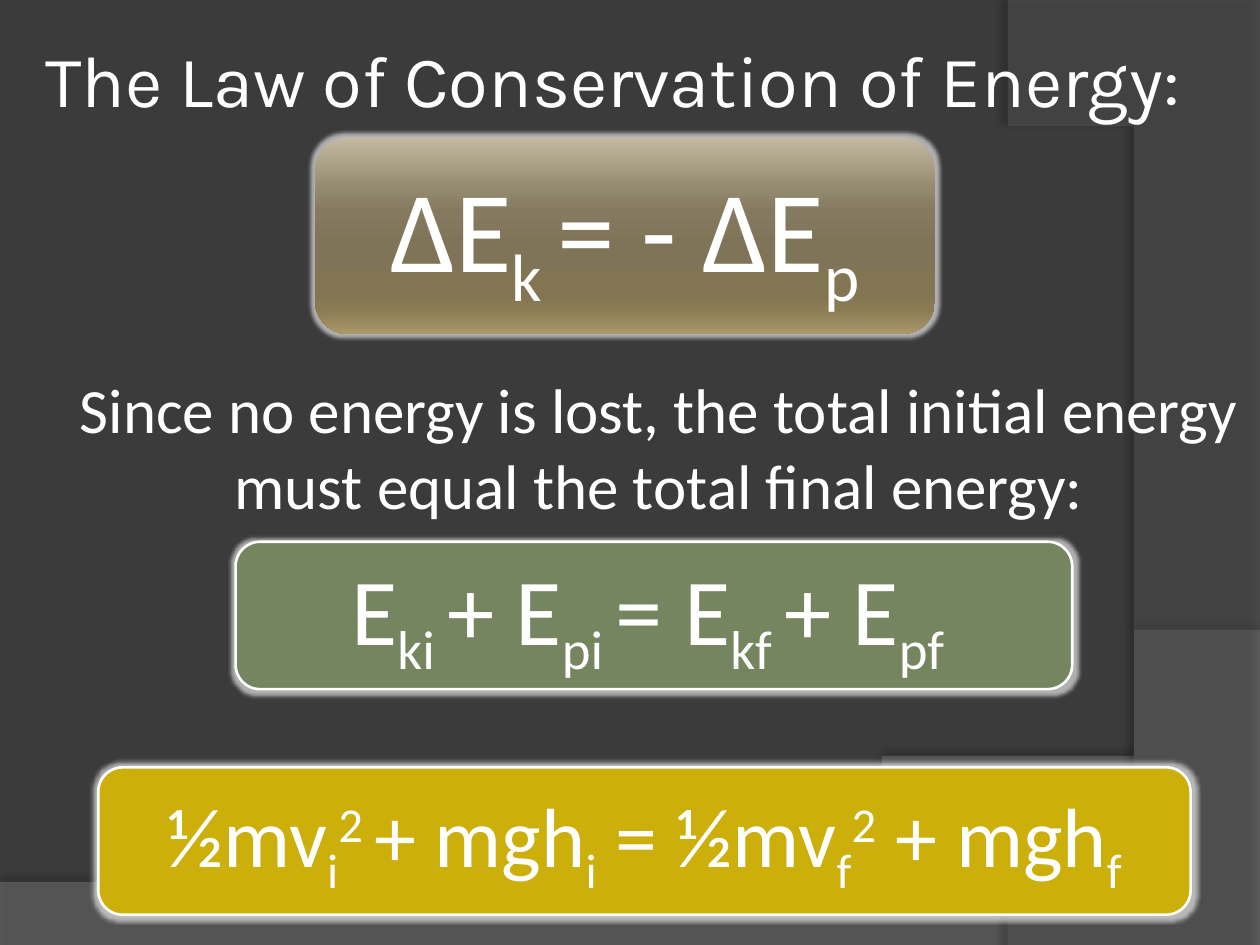
"""Build a slide on the law of conservation of energy."""
from dataclasses import dataclass

from pptx import Presentation
from pptx.dml.color import RGBColor
from pptx.enum.shapes import MSO_SHAPE
from pptx.enum.text import MSO_ANCHOR, MSO_AUTO_SIZE, PP_ALIGN
from pptx.oxml import parse_xml
from pptx.oxml.ns import nsdecls, qn
from pptx.util import Inches, Pt

WHITE = "FFFFFF"
BASES = {"_": "-25000", "^": "30000"}
Point = tuple[float, float]


@dataclass
class Box:
    """A rounded box with a formula; runs led by _ or ^ are lowered or raised."""
    left: float
    top: float
    width: float
    height: float
    size: int
    runs: list[str]
    fill: str = ""


@dataclass
class Wave:
    """A translucent backdrop shape with a soft shadow."""
    points: list[Point]
    color: str
    alpha: int
    shade: int
    dist: float
    angle: int


BOXES = [
    Box(2.5, 1.09, 4.92, 1.56, 66, ["ΔE", "_k ", "= - ΔE", "_p"]),
    Box(1.87, 4.3, 6.64, 1.17, 54,
        ["E", "_ki ", "+ E", "_pi ", "= E", "_kf ", "+ E", "_pf "], "748560"),
    Box(0.78, 6.09, 8.67, 1.17, 48,
        ["½mv", "_i", "^2 ", "+ mgh", "_i", " = ½mv", "_f", "^2", " + mgh", "_f"],
        "CCAF0A"),
]
STOPS = {0: "C4BAA3", 25: "958B71", 38: "857A60", 55: "7F7457",
         80: "827552", 88: "8C7C54", 100: "AA9868"}


def rgb(code: str) -> RGBColor:
    """Turn a hex string into a colour."""
    return RGBColor.from_string(code)


def curve(a: Point, b: Point, c: Point, d: Point, steps: int = 40) -> list[Point]:
    """Sample a cubic Bezier curve."""
    ts = [i / steps for i in range(steps + 1)]
    return [tuple((1 - t) ** 3 * p + 3 * t * (1 - t) ** 2 * q
                  + 3 * t * t * (1 - t) * r + t ** 3 * s
                  for p, q, r, s in zip(a, b, c, d)) for t in ts]


def add_fx(shape, tag: str, attrs: str, color: str, alpha: int) -> None:
    """Give a shape one effect in place of the theme's."""
    shape.shadow.inherit = False
    shape._element.spPr.find(qn("a:effectLst")).append(parse_xml(
        f'<a:{tag} {nsdecls("a")} {attrs}><a:srgbClr val="{color}">'
        f'<a:alpha val="{alpha * 1000}"/></a:srgbClr></a:{tag}>'))


def style(para, size: float, face: str, align: PP_ALIGN) -> None:
    """Set the font and alignment of a paragraph."""
    para.alignment = align
    para.font.size, para.font.name = Pt(size), face
    para.font.color.rgb = rgb(WHITE)


def place(shape, left: float, top: float, width: float, height: float) -> None:
    """Move and size a shape."""
    shape.left, shape.top = Inches(left), Inches(top)
    shape.width, shape.height = Inches(width), Inches(height)


def draw_wave(slide, wave: Wave, layer: int) -> None:
    """Draw a backdrop shape behind the text."""
    start, *rest = wave.points
    pen = slide.shapes.build_freeform(*start, scale=Inches(1))
    pen.add_line_segments(rest, close=True)
    shape = pen.convert_to_shape()
    shape.fill.solid()
    shape.fill.fore_color.rgb = rgb(wave.color)
    tint = shape._element.spPr.find(".//" + qn("a:srgbClr"))
    tint.append(parse_xml(f'<a:alpha {nsdecls("a")} val="{wave.alpha * 1000}"/>'))
    shape.line.fill.background()
    add_fx(shape, "outerShdw", f'blurRad="{Pt(4)}" dist="{Pt(wave.dist)}" '
           f'dir="{wave.angle * 60000}" rotWithShape="0"', "000000", wave.shade)
    slide.shapes._spTree.insert(2 + layer, shape._element)


def draw_box(slide, box: Box) -> None:
    """Draw a glowing box with its formula."""
    area = map(Inches, (box.left, box.top, box.width, box.height))
    shape = slide.shapes.add_shape(MSO_SHAPE.ROUNDED_RECTANGLE, *area)
    if box.fill:
        shape.fill.solid()
        shape.fill.fore_color.rgb = rgb(box.fill)
        shape.line.color.rgb = rgb(WHITE)
        shape.line.width = Pt(1.5)
    else:
        stops = "".join(f'<a:gs pos="{pos * 1000}"><a:srgbClr val="{code}"/></a:gs>'
                        for pos, code in STOPS.items())
        shape._element.spPr.find(qn("a:prstGeom")).addnext(parse_xml(
            f'<a:gradFill {nsdecls("a")} rotWithShape="1"><a:gsLst>{stops}</a:gsLst>'
            '<a:lin ang="5400000" scaled="0"/></a:gradFill>'))
        shape.line.fill.background()
    add_fx(shape, "glow", f'rad="{Pt(5)}"', WHITE, 60)
    frame = shape.text_frame
    frame.vertical_anchor = MSO_ANCHOR.MIDDLE
    para = frame.paragraphs[0]
    style(para, box.size, "Calibri", PP_ALIGN.CENTER)
    for text in box.runs:
        run = para.add_run()
        run.text = text.lstrip("_^")
        if text[0] in BASES:
            run.font._element.set("baseline", BASES[text[0]])


def fill_text(slide) -> None:
    """Write the title and the body sentence."""
    title, body = slide.placeholders
    place(title, 0.31, 0, 9.38, 1.25)
    place(body, 0, 2.89, 10, 1.72)
    for shape in (title, body):
        shape.text_frame.auto_size = MSO_AUTO_SIZE.NONE
    frame = title.text_frame
    frame.text = "The Law of Conservation of Energy:"
    frame.vertical_anchor = MSO_ANCHOR.MIDDLE
    frame.margin_left = frame.margin_right = Inches(0.05)
    style(frame.paragraphs[0], 41.4, "Karla", PP_ALIGN.LEFT)
    body.text_frame.text = ("Since no energy is lost, the total initial energy "
                            "must equal the total final energy:")
    para = body.text_frame.paragraphs[0]
    style(para, 36, "Calibri", PP_ALIGN.CENTER)
    para.space_before = Pt(7.2)
    props = para._p.get_or_add_pPr()
    props.set("marL", str(Inches(0.46)))
    props.set("indent", "0")
    props.find(qn("a:spcBef")).addnext(parse_xml(f'<a:buNone {nsdecls("a")}/>'))


def main() -> None:
    """Build and save the slide."""
    deck = Presentation()
    deck.slide_width, deck.slide_height = Inches(10), Inches(7.5)
    slide = deck.slides.add_slide(deck.slide_layouts[1])
    slide.background.fill.solid()
    slide.background.fill.fore_color.rgb = rgb("3B3B3B")
    swell = curve((10, 5.2), (5.59, 7.29), (3.91, 7.19), (0, 7.05))
    arc = curve((8.21, 7.5), (9.35, 6.19), (10.18, 3), (8, 0))
    waves = [Wave([(0, 7.5), (10, 7.5), *swell], "7F7F7F", 45, 35, 3.5, 270),
             Wave([(10, 0.02), (10, 7.5), *arc], "5E5E5E", 40, 45, 4, 180)]
    for layer, wave in enumerate(waves):
        draw_wave(slide, wave, layer)
    fill_text(slide)
    for box in BOXES:
        draw_box(slide, box)
    deck.save("out.pptx")


if __name__ == "__main__":
    main()
